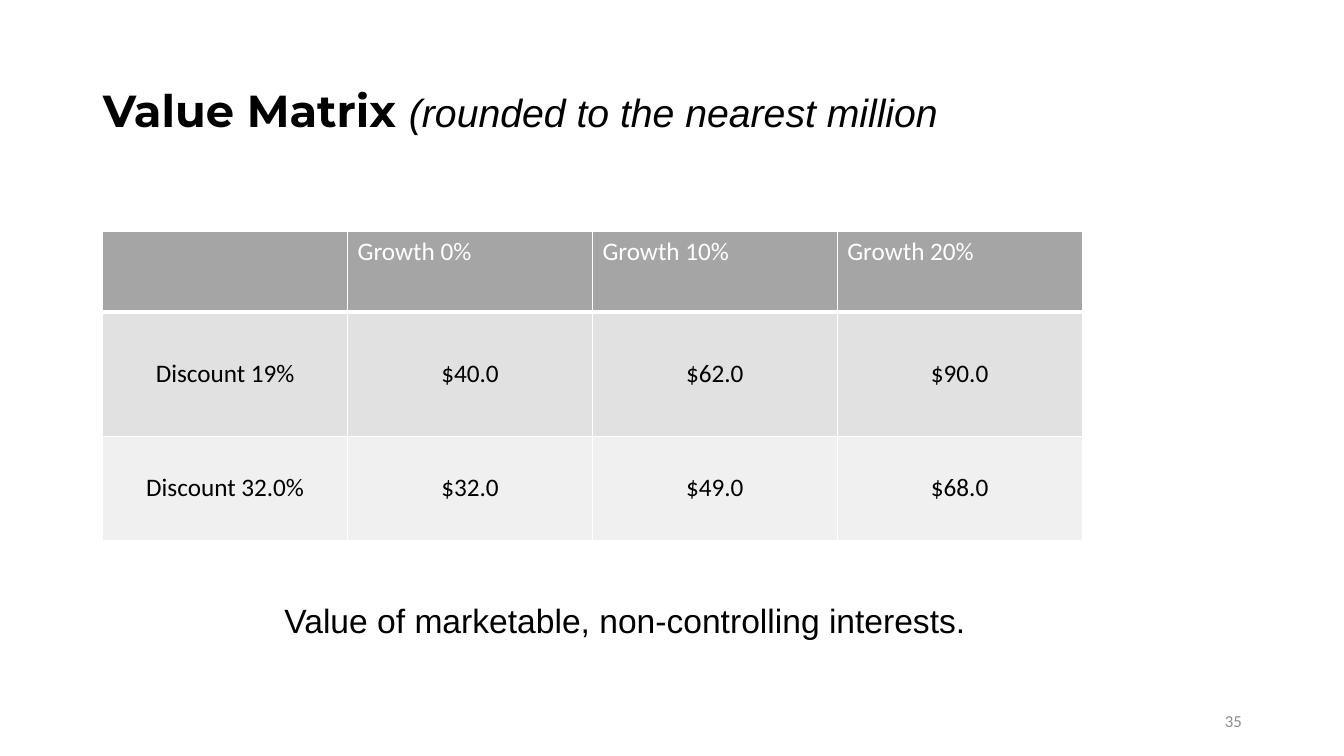
from dataclasses import dataclass
from lxml.etree import SubElement
from pptx import Presentation
from pptx.dml.color import RGBColor
from pptx.enum.text import MSO_ANCHOR, PP_ALIGN
from pptx.oxml.ns import qn
from pptx.util import Cm, Pt


@dataclass(frozen=True)
class Theme:
    black: str = "000000"
    white: str = "FFFFFF"
    gray: str = "8C8C8C"
    fills: tuple = ("A5A5A5", "E1E1E1", "F0F0F0")
    head: int = 32
    aside: int = 28
    note: int = 24
    cell: int = 18
    small: int = 12


theme = Theme()


def style(font, name, size, color):
    font.name, font.size = name, Pt(size)
    font.color.rgb = RGBColor.from_string(color)


def border(cell, side, width):
    line = SubElement(cell._tc.get_or_add_tcPr(), qn(f"a:{side}"), w=str(Pt(width)))
    fill = SubElement(line, qn("a:solidFill"))
    SubElement(fill, qn("a:srgbClr"), val=theme.white)


deck = Presentation()
deck.slide_width, deck.slide_height = Cm(33.87), Cm(19.05)
slide = deck.slides.add_slide(deck.slide_layouts[5])

title = slide.shapes.title
title.left, title.top, title.width, title.height = Cm(2.34), Cm(1.01), Cm(29.21), Cm(3.68)
title.text_frame.vertical_anchor = MSO_ANCHOR.MIDDLE
para = title.text_frame.paragraphs[0]
para.alignment, para.line_spacing = PP_ALIGN.LEFT, 0.9
name = para.add_run()
name.text = "Value Matrix "
style(name.font, "Montserrat", theme.head, theme.black)
name.font.bold = True
aside = para.add_run()
aside.text = "(rounded to the nearest million"
style(aside.font, "Arial", theme.aside, theme.black)
aside.font.italic = True

rows = [
    ["", "Growth 0%", "Growth 10%", "Growth 20%"],
    ["Discount 19%", "$40.0", "$62.0", "$90.0"],
    ["Discount 32.0%", "$32.0", "$49.0", "$68.0"],
]
highs = [2.03, 3.13, 2.63]
grid = slide.shapes.add_table(3, 4, Cm(2.59), Cm(5.83), Cm(24.68), Cm(sum(highs))).table
for col in grid.columns:
    col.width = Cm(6.17)
for r, (texts, high) in enumerate(zip(rows, highs)):
    grid.rows[r].height = Cm(high)
    for c, text in enumerate(texts):
        cell = grid.cell(r, c)
        for side in ("lnL", "lnR", "lnT", "lnB"):
            thick = (r, side) in ((0, "lnB"), (1, "lnT"))
            border(cell, side, 3 if thick else 1)
        cell.fill.solid()
        cell.fill.fore_color.rgb = RGBColor.from_string(theme.fills[r])
        cell.vertical_anchor = MSO_ANCHOR.MIDDLE if r else MSO_ANCHOR.TOP
        cell.text = text
        para = cell.text_frame.paragraphs[0]
        para.alignment = PP_ALIGN.CENTER if r else PP_ALIGN.LEFT
        style(para.font, "Calibri", theme.cell, theme.black if r else theme.white)
        para.font.bold = False

notes = [
    ("Value of marketable, non-controlling interests.", (4.93, 14.99, 21.64, 1.3),
     PP_ALIGN.CENTER, MSO_ANCHOR.TOP, "Arial", theme.note, theme.black),
    ("35", (23.93, 17.65, 7.62, 1.02),
     PP_ALIGN.RIGHT, MSO_ANCHOR.MIDDLE, "Calibri", theme.small, theme.gray),
]
for text, place, align, anchor, face, size, color in notes:
    frame = slide.shapes.add_textbox(*map(Cm, place)).text_frame
    frame.word_wrap, frame.vertical_anchor = True, anchor
    frame.text = text
    para = frame.paragraphs[0]
    para.alignment = align
    style(para.font, face, size, color)

deck.save("out.pptx")
